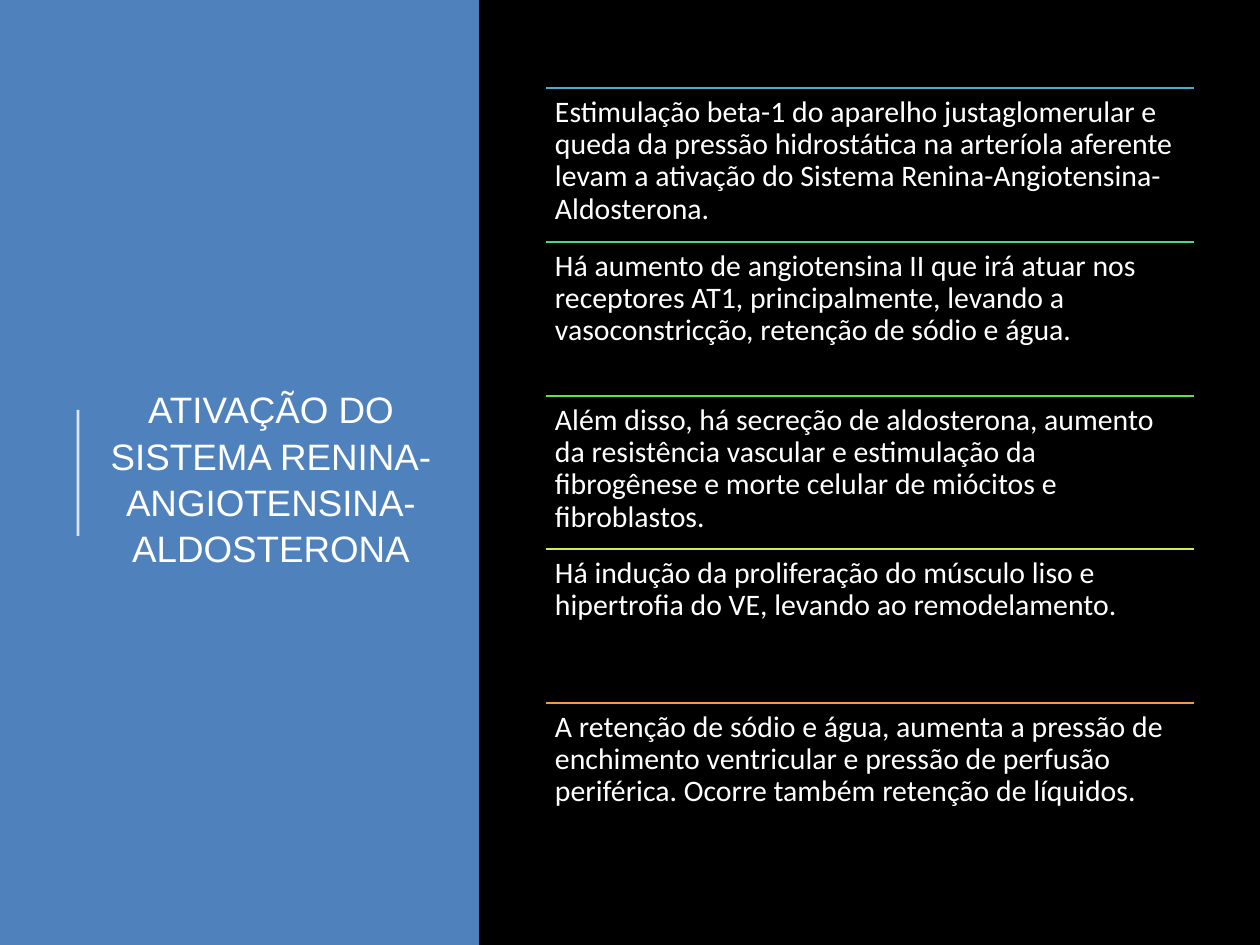
from dataclasses import dataclass
from typing import Optional

from lxml import etree
from pptx import Presentation
from pptx.dml.color import RGBColor
from pptx.enum.shapes import MSO_CONNECTOR, MSO_SHAPE
from pptx.enum.text import MSO_ANCHOR, MSO_AUTO_SIZE, PP_ALIGN
from pptx.oxml.ns import qn
from pptx.util import Emu, Pt

RECTANGLE = MSO_SHAPE.RECTANGLE
STRAIGHT = MSO_CONNECTOR.STRAIGHT
LEFT, CENTER = PP_ALIGN.LEFT, PP_ALIGN.CENTER
TOP, MIDDLE = MSO_ANCHOR.TOP, MSO_ANCHOR.MIDDLE
NO_AUTOFIT = MSO_AUTO_SIZE.NONE

PX_PER_INCH = 126
TITLE_ONLY_LAYOUT = 5


@dataclass(frozen=True)
class Theme:
    background: str = "000000"
    panel: str = "4F81BD"
    text: str = "FFFFFF"
    title_font: str = "Arial"
    body_font: str = "Calibri"
    title_size: float = 21
    body_size: float = 17
    accent_width: float = 1.5
    rule_width: float = 0.75


@dataclass(frozen=True)
class Area:
    left: int
    top: int
    width: int
    height: int


@dataclass(frozen=True)
class Step:
    color: str
    text: str


THEME = Theme()
PAGE = Area(0, 0, 1260, 945)
PANEL = Area(0, 0, 479, 945)
TITLE = Area(97, 98, 348, 759)
ACCENT = Area(78, 410, 0, 126)
STEPS_AREA = Area(546, 88, 648, 769)
STEP_INSET = 9

TITLE_TEXT = "ATIVAÇÃO DO SISTEMA RENINA-ANGIOTENSINA-ALDOSTERONA"
STEPS = [
    Step("4BACC6", "Estimulação beta-1 do aparelho justaglomerular e queda da pressão "
                   "hidrostática na arteríola aferente levam a ativação do Sistema "
                   "Renina-Angiotensina-Aldosterona."),
    Step("48D491", "Há aumento de angiotensina II que irá atuar nos receptores AT1, "
                   "principalmente, levando a vasoconstricção, retenção de sódio e água."),
    Step("60E146", "Além disso, há secreção de aldosterona, aumento da resistência vascular "
                   "e estimulação da fibrogênese e morte celular de miócitos e fibroblastos."),
    Step("D5EC46", "Há indução da proliferação do músculo liso e hipertrofia do VE, "
                   "levando ao remodelamento."),
    Step("F79646", "A retenção de sódio e água, aumenta a pressão de enchimento ventricular "
                   "e pressão de perfusão periférica. Ocorre também retenção de líquidos."),
]


def px(length: int) -> Emu:
    return Emu(round(length * 914400 / PX_PER_INCH))


def place(shape, area: Area) -> None:
    shape.left, shape.top = px(area.left), px(area.top)
    shape.width, shape.height = px(area.width), px(area.height)


def write(shape, text: str, *, font: str, size: float, color: str, align=LEFT,
          anchor=TOP, line_spacing: float = 1.0, inset: Optional[int] = None) -> None:
    frame = shape.text_frame
    frame.word_wrap = True
    frame.auto_size = NO_AUTOFIT
    frame.vertical_anchor = anchor
    if inset is not None:
        frame.margin_left = frame.margin_right = px(inset)
        frame.margin_top = frame.margin_bottom = px(inset)
    para = frame.paragraphs[0]
    para.alignment = align
    para.line_spacing = line_spacing
    span = para.add_run()
    span.text = text
    span.font.name = font
    span.font.size = Pt(size)
    span.font.color.rgb = RGBColor.from_string(color)


def draw_line(page, area: Area, color: str, width: float,
              opacity: Optional[int] = None) -> None:
    line = page.shapes.add_connector(
        STRAIGHT, px(area.left), px(area.top),
        px(area.left + area.width), px(area.top + area.height))
    line.line.color.rgb = RGBColor.from_string(color)
    line.line.width = Pt(width)
    properties = line.element.spPr
    if opacity is not None:
        fill_color = properties.find(".//" + qn("a:srgbClr"))
        etree.SubElement(fill_color, qn("a:alpha"), val=str(opacity * 1000))
    etree.SubElement(properties, qn("a:effectLst"))


def draw_panel(page) -> None:
    panel = page.shapes.add_shape(RECTANGLE, 0, 0, px(PANEL.width), px(PANEL.height))
    panel.shadow.inherit = False
    panel.fill.solid()
    panel.fill.fore_color.rgb = RGBColor.from_string(THEME.panel)
    panel.line.fill.background()
    # Keep the panel behind the title
    title_element = page.shapes.title.element
    title_element.addprevious(panel.element)


def draw_step(page, step: Step, area: Area) -> None:
    rule = Area(area.left, area.top, area.width, 0)
    draw_line(page, rule, step.color, THEME.rule_width)
    box = page.shapes.add_textbox(0, 0, 0, 0)
    place(box, area)
    write(box, step.text, font=THEME.body_font, size=THEME.body_size,
          color=THEME.text, line_spacing=0.9, inset=STEP_INSET)


def main() -> None:
    deck = Presentation()
    deck.slide_width, deck.slide_height = px(PAGE.width), px(PAGE.height)
    page = deck.slides.add_slide(deck.slide_layouts[TITLE_ONLY_LAYOUT])
    page.background.fill.solid()
    page.background.fill.fore_color.rgb = RGBColor.from_string(THEME.background)

    # Left panel with title and accent line
    draw_panel(page)
    place(page.shapes.title, TITLE)
    write(page.shapes.title, TITLE_TEXT, font=THEME.title_font, size=THEME.title_size,
          color=THEME.text, align=CENTER, anchor=MIDDLE, line_spacing=1.05)
    draw_line(page, ACCENT, THEME.text, THEME.accent_width, opacity=80)

    # Steps, evenly spread, each under its own rule
    for index, step in enumerate(STEPS):
        top = STEPS_AREA.top + round(index * STEPS_AREA.height / len(STEPS))
        height = STEPS_AREA.height // len(STEPS)
        draw_step(page, step, Area(STEPS_AREA.left, top, STEPS_AREA.width, height))

    deck.save("out.pptx")


if __name__ == "__main__":
    main()
